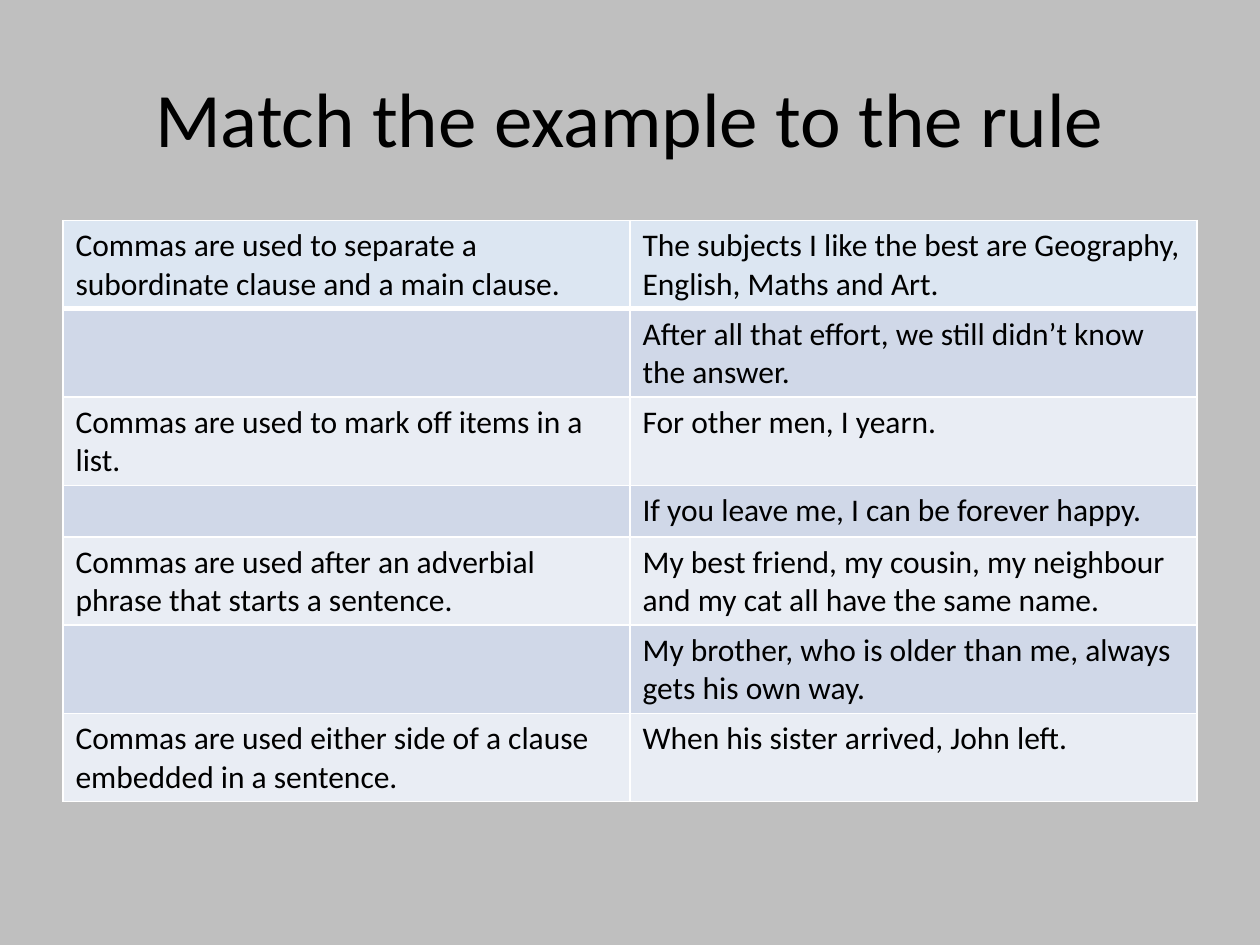
from lxml import etree
from pptx import Presentation
from pptx.dml.color import RGBColor
from pptx.enum.text import MSO_ANCHOR, PP_ALIGN
from pptx.oxml.ns import qn
from pptx.util import Inches, Pt

MIDDLE = MSO_ANCHOR.MIDDLE
CENTER = PP_ALIGN.CENTER
FONT = "Calibri"
COLORS = {
    "background": "BFBFBF",
    "text": "000000",
    "border": "FFFFFF",
    "header": "DCE6F2",
    "dark_band": "D0D8E8",
    "light_band": "E9EDF4",
}
ROWS = [
    ("Commas are used to separate a subordinate clause and a main clause.",
     "The subjects I like the best are Geography, English, Maths and Art."),
    ("", "After all that effort, we still didn’t know the answer."),
    ("Commas are used to mark off items in a list.", "For other men, I yearn."),
    ("", "If you leave me, I can be forever happy."),
    ("Commas are used after an adverbial phrase that starts a sentence.",
     "My best friend, my cousin, my neighbour and my cat all have the same name."),
    ("", "My brother, who is older than me, always gets his own way."),
    ("Commas are used either side of a clause embedded in a sentence.",
     "When his sister arrived, John left."),
]


def set_fill(fill, color):
    fill.solid()
    fill.fore_color.rgb = RGBColor.from_string(COLORS[color])


def write_text(text_frame, text, size):
    text_frame.text = text
    for run in text_frame.paragraphs[0].runs:
        run.font.name = FONT
        run.font.size = Pt(size)
        run.font.color.rgb = RGBColor.from_string(COLORS["text"])


def add_title(slide, text):
    title = slide.shapes.add_textbox(Inches(0.5), Inches(0.3), Inches(9), Inches(1.25))
    text_frame = title.text_frame
    text_frame.word_wrap = True
    text_frame.vertical_anchor = MIDDLE
    write_text(text_frame, text, 44)
    text_frame.paragraphs[0].alignment = CENTER


def set_borders(cell, top, bottom):
    properties = cell._tc.get_or_add_tcPr()
    for side, width in (("L", 1), ("R", 1), ("T", top), ("B", bottom)):
        line = etree.SubElement(properties, qn(f"a:ln{side}"), w=str(Pt(width)))
        fill = etree.SubElement(line, qn("a:solidFill"))
        etree.SubElement(fill, qn("a:srgbClr"), val=COLORS["border"])


def row_color(index):
    if index == 0:
        return "header"
    return "dark_band" if index % 2 else "light_band"


def add_matching_table(slide, rows):
    row_height = Inches(0.41)
    frame = slide.shapes.add_table(
        len(rows), 2, Inches(0.5), Inches(1.75), Inches(9), row_height * len(rows))
    table = frame.table
    table.first_row = False
    table.horz_banding = False
    for row_index, texts in enumerate(rows):
        table.rows[row_index].height = row_height
        for column_index, text in enumerate(texts):
            cell = table.cell(row_index, column_index)
            write_text(cell.text_frame, text, 18)
            set_borders(cell, 3 if row_index == 1 else 1, 3 if row_index == 0 else 1)
            set_fill(cell.fill, row_color(row_index))


def main():
    presentation = Presentation()
    presentation.slide_width = Inches(10)
    presentation.slide_height = Inches(7.5)
    slide = presentation.slides.add_slide(presentation.slide_layouts[6])
    set_fill(slide.background.fill, "background")
    add_title(slide, "Match the example to the rule")
    add_matching_table(slide, ROWS)
    presentation.save("out.pptx")


if __name__ == "__main__":
    main()
